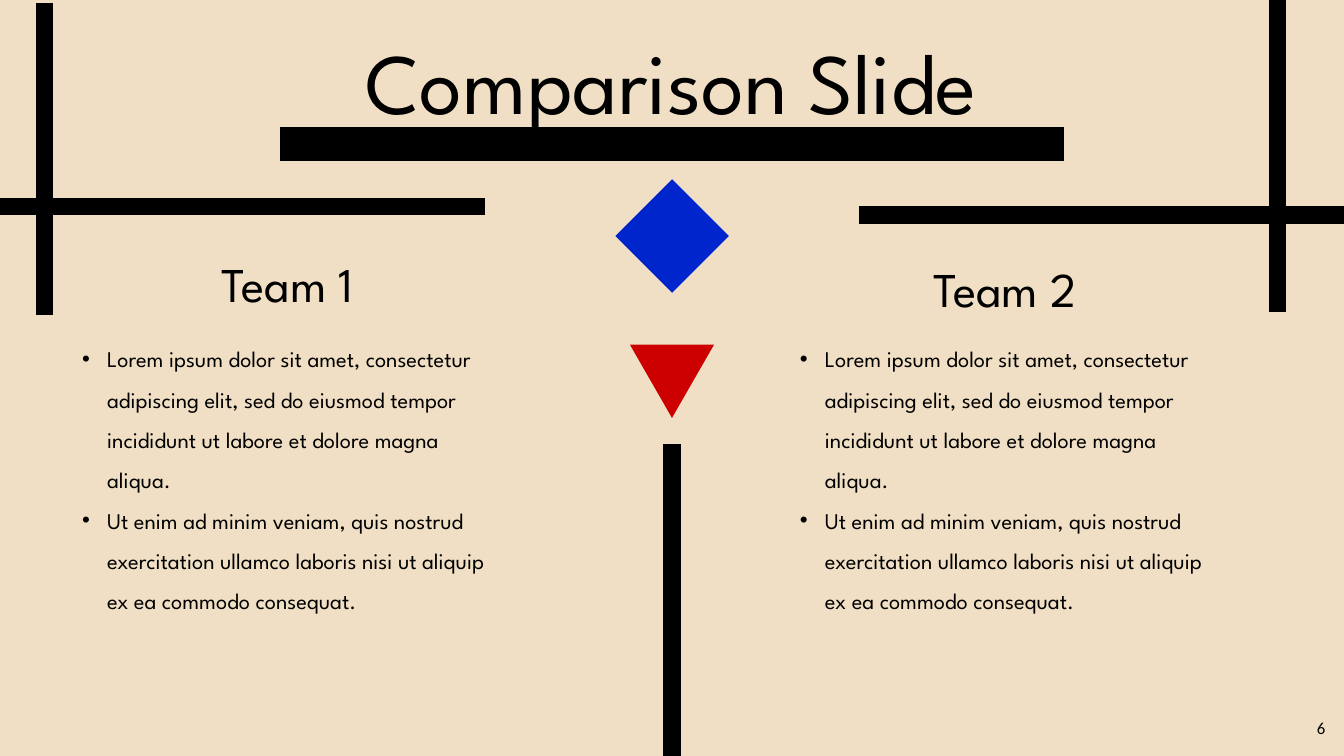
"""Build a comparison slide with two teams set around a centre line."""
import lxml.etree
import pptx
import pptx.dml.color
import pptx.enum.shapes
import pptx.enum.text
import pptx.oxml.ns
import pptx.util
from dataclasses import dataclass

Cm = pptx.util.Cm
Pt = pptx.util.Pt
qn = pptx.oxml.ns.qn
RGB = pptx.dml.color.RGBColor
KIND = pptx.enum.shapes.MSO_SHAPE
ALIGN = pptx.enum.text.PP_ALIGN


@dataclass(frozen=True)
class Theme:
    paper: RGB = RGB(0xF0, 0xDF, 0xC4)
    ink: RGB = RGB(0, 0, 0)
    blue: RGB = RGB(0, 0x25, 0xCC)
    red: RGB = RGB(0xCC, 0, 0)
    font: str = "League Spartan"
    plain: str = "Calibri"
    title: int = 92
    head: int = 52
    body: int = 24
    number: int = 18
    thick: float = 36
    thin: float = 18.75


theme = Theme()


def place(shape, left, top, width, height, inset=0):
    shape.left, shape.top = Cm(left), Cm(top)
    shape.width, shape.height = Cm(width), Cm(height)
    frame = shape.text_frame
    frame.word_wrap = True
    frame.auto_size = pptx.enum.text.MSO_AUTO_SIZE.SHAPE_TO_FIT_TEXT
    frame.vertical_anchor = pptx.enum.text.MSO_ANCHOR.TOP
    frame.margin_left = frame.margin_right = Cm(inset)
    frame.margin_top = frame.margin_bottom = Cm(inset / 2)
    return frame


def write(para, text, size, align, space, font=theme.font):
    para.alignment = align
    para.line_spacing = space
    para.space_before = para.space_after = Pt(0)
    run = para.add_run()
    run.text = text
    run.font.name = font
    run.font.size = Pt(size)
    run.font.bold = False
    run.font.color.rgb = theme.ink


deck = pptx.Presentation()
deck.slide_width, deck.slide_height = Cm(50.8), Cm(28.58)
slide = deck.slides.add_slide(deck.slide_layouts.get_by_name("Comparison"))
slide.background.fill.solid()
slide.background.fill.fore_color.rgb = theme.paper
slots = {slot.placeholder_format.idx: slot for slot in slide.placeholders}

marks = [
    (KIND.DIAMOND, 23.26, 6.78, 4.29, 4.29, theme.blue),
    (KIND.FLOWCHART_MERGE, 23.81, 13.03, 3.18, 2.77, theme.red),
]
for kind, left, top, width, height, color in marks:
    mark = slide.shapes.add_shape(kind, Cm(left), Cm(top), Cm(width), Cm(height))
    mark.shadow.inherit = False
    mark.fill.solid()
    mark.fill.fore_color.rgb = color
    mark.line.fill.background()

bars = [
    (10.57, 5.44, 40.23, 5.44, theme.thick),
    (48.29, 0, 48.29, 11.79, theme.thin),
    (32.46, 8.13, 50.8, 8.13, theme.thin),
    (25.4, 16.79, 25.4, 28.58, theme.thin),
    (0, 7.8, 18.34, 7.8, theme.thin),
    (1.68, 0.13, 1.68, 11.91, theme.thin),
]
for left, top, right, base, weight in bars:
    bar = slide.shapes.add_connector(
        pptx.enum.shapes.MSO_CONNECTOR.STRAIGHT, Cm(left), Cm(top), Cm(right), Cm(base))
    bar.line.width = Pt(weight)
    bar.line.color.rgb = theme.ink
    lxml.etree.SubElement(bar._element.spPr, qn("a:effectLst"))

frame = place(slots[0], 9.93, 0.43, 30.91, 4.34)
write(frame.paragraphs[0], "Comparison Slide", theme.title, ALIGN.CENTER, Pt(128.8))

points = [
    "Lorem ipsum dolor sit amet, consectetur adipiscing elit, sed do eiusmod "
    "tempor incididunt ut labore et dolore magna aliqua.",
    "Ut enim ad minim veniam, quis nostrud exercitation ullamco laboris nisi "
    "ut aliquip ex ea commodo consequat.",
]
teams = [
    ("Team 1", 1, (7.37, 9.25, 6.99, 2.51), 3.1),
    ("Team 2", 3, (34.34, 9.42, 7.29, 2.51), 30.23),
]
for name, slot, spot, left in teams:
    frame = place(slots[slot], *spot)
    write(frame.paragraphs[0], name, theme.head, ALIGN.CENTER, Pt(72.8))
    frame = place(slots[slot + 1], left, 12.55, 15.47, 12.19)
    for index, point in enumerate(points):
        para = frame.add_paragraph() if index else frame.paragraphs[0]
        props = para._p.get_or_add_pPr()
        props.set("marL", str(Cm(0.95)))
        props.set("indent", str(-Cm(0.95)))
        lxml.etree.SubElement(props, qn("a:buFont"), typeface="Arial")
        lxml.etree.SubElement(props, qn("a:buChar"), char="•")
        write(para, point, theme.body, ALIGN.LEFT, 1.5)

number = slide.shapes.add_textbox(Cm(49.53), Cm(27), Cm(0.69), Cm(1.02))
frame = place(number, 49.53, 27, 0.69, 1.02, 0.25)
frame.word_wrap = False
write(frame.paragraphs[0], "6", theme.number, ALIGN.LEFT, 1.0, theme.plain)

deck.save("out.pptx")
